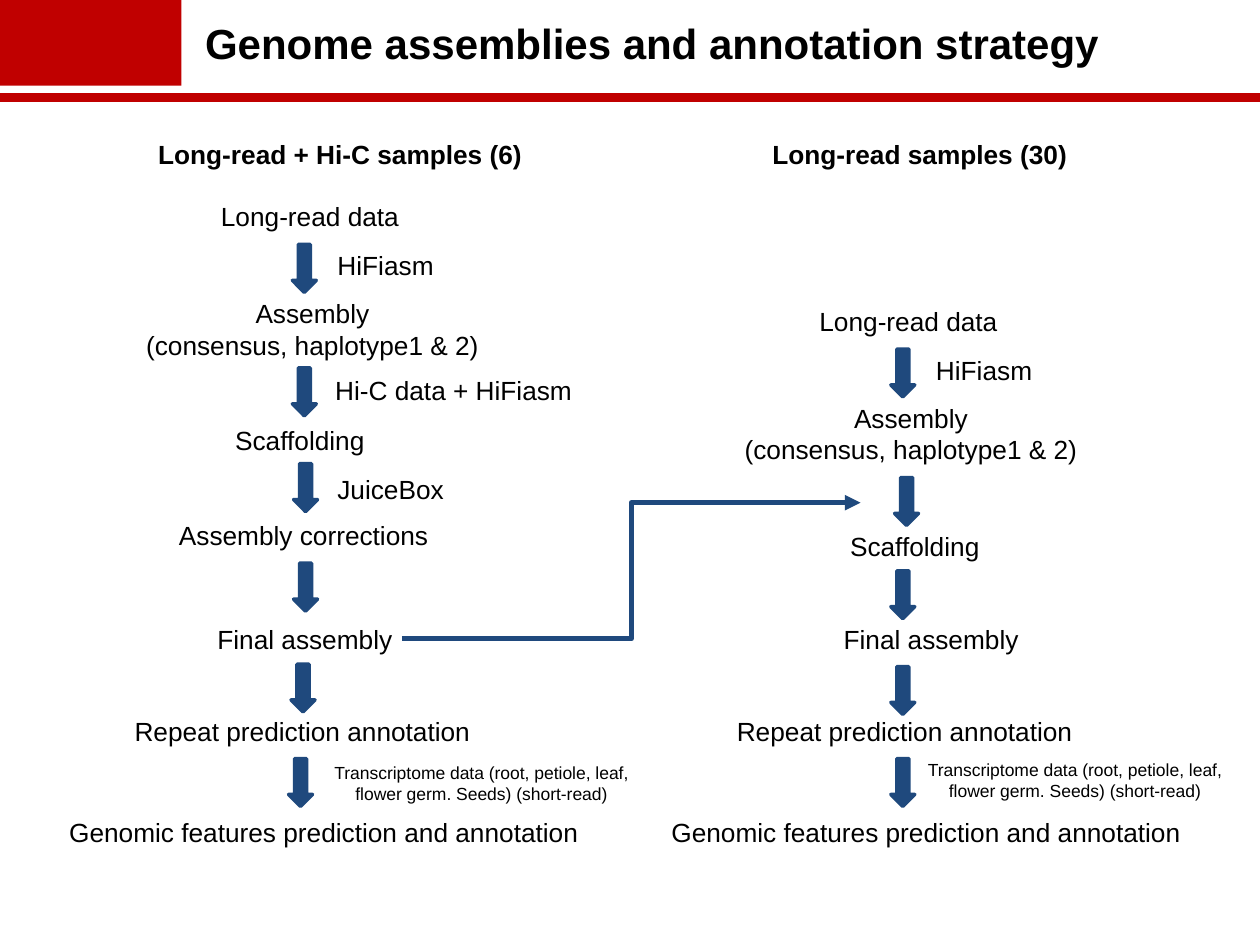
from lxml import etree
from pptx import Presentation
from pptx import util as u
from pptx.dml.color import RGBColor
from pptx.enum import shapes, text
from pptx.oxml.ns import qn

RED, BLUE, BLACK = "C00000", "1F497D", "000000"


def color(hex_string):
    return RGBColor.from_string(hex_string)


def write(tf, content, size=15, bold=False, align=text.PP_ALIGN.CENTER):
    """Fill a text frame, one paragraph per line of content."""
    for i, line in enumerate(content.split("\n")):
        p = tf.paragraphs[0] if i == 0 else tf.add_paragraph()
        p.alignment = align
        r = p.add_run()
        r.text = line
        r.font.name = "Arial"
        r.font.size = u.Pt(size)
        r.font.bold = bold
        r.font.color.rgb = color(BLACK)


class FlowSlide:
    arrow_size = (0.19, 0.38)

    def __init__(self, prs):
        self.s = prs.slides.add_slide(prs.slide_layouts[5])

    def title(self, content, x, y, w, h):
        sp = self.s.shapes.title
        sp.left, sp.top, sp.width, sp.height = map(u.Inches, (x, y, w, h))
        tf = sp.text_frame
        tf.vertical_anchor = text.MSO_ANCHOR.MIDDLE
        write(tf, content, size=24, bold=True)

    def shape(self, kind, x, y, w, h, fill, line_width=None):
        sp = self.s.shapes.add_shape(kind, *map(u.Inches, (x, y, w, h)))
        sp.shadow.inherit = False
        sp.fill.solid()
        sp.fill.fore_color.rgb = color(fill)
        if line_width:
            sp.line.color.rgb = color(fill)
            sp.line.width = u.Pt(line_width)
        else:
            sp.line.fill.background()

    def band(self, x, y, w, h):
        self.shape(shapes.MSO_SHAPE.RECTANGLE, x, y, w, h, RED)

    def arrow(self, x, y):
        self.shape(shapes.MSO_SHAPE.DOWN_ARROW, x, y, *self.arrow_size, BLUE, 2)

    def label(self, content, center, y, w, h=0.33, wrap=False, **style):
        """Add text centred on a horizontal position."""
        sp = self.s.shapes.add_textbox(*map(u.Inches, (center - w / 2, y, w, h)))
        tf = sp.text_frame
        tf.word_wrap = wrap
        tf.auto_size = text.MSO_AUTO_SIZE.SHAPE_TO_FIT_TEXT
        tf.margin_left = tf.margin_right = u.Inches(0.07)
        tf.margin_top = tf.margin_bottom = u.Inches(0.04)
        write(tf, content, **style)

    def elbow(self, x1, y1, x2, y2):
        c = self.s.shapes.add_connector(
            shapes.MSO_CONNECTOR.ELBOW, *map(u.Inches, (x1, y1, x2, y2)))
        c.line.color.rgb = color(BLUE)
        c.line.width = u.Pt(3)
        etree.SubElement(c.line._get_or_add_ln(), qn("a:tailEnd"), type="triangle")
        etree.SubElement(c._element.spPr, qn("a:effectLst"))

    def assembly_steps(self, dx=0, dy=0):
        self.label("Long-read data", 2.46 + dx, 1.55 + dy, 1.7)
        self.arrow(2.32 + dx, 1.94 + dy)
        self.label("HiFiasm", 3.06 + dx, 1.94 + dy, 0.98)
        self.label("Assembly\n(consensus, haplotype1 & 2)", 2.48 + dx, 2.32 + dy, 2.87, 0.58)

    def annotation_steps(self, dx=0):
        self.label("Repeat prediction annotation", 2.4 + dx, 5.64, 2.84)
        self.arrow(2.29 + dx, 6.02)
        self.label("Genomic features prediction and annotation", 2.57 + dx, 6.44, 4.23)

    def transcriptome(self, center, y):
        self.label("Transcriptome data (root, petiole, leaf, flower germ. Seeds) (short-read)",
                   center, y, 2.49, 0.41, wrap=True, size=10)


def main():
    prs = Presentation()
    prs.slide_width, prs.slide_height = u.Inches(10), u.Inches(7.5)
    flow = FlowSlide(prs)

    flow.band(0, 0.74, 10, 0.07)
    flow.band(0, -0.01, 1.44, 0.69)
    flow.title("Genome assemblies and annotation strategy", 1.3, 0.09, 7.75, 0.5)

    flow.label("Long-read + Hi-C samples (6)", 2.7, 1.06, 3.3, bold=True)
    flow.assembly_steps()
    flow.label("Hi-C data + HiFiasm", 3.6, 2.93, 2.11)
    flow.label("Scaffolding", 2.38, 3.33, 1.24)
    flow.label("JuiceBox", 3.1, 3.72, 1)
    flow.label("Assembly corrections", 2.41, 4.08, 2.15)
    flow.label("Final assembly", 2.42, 4.91, 1.55)
    for x, y in ((2.32, 2.92), (2.33, 3.68), (2.33, 4.47), (2.31, 5.27)):
        flow.arrow(x, y)
    flow.annotation_steps()
    flow.transcriptome(3.82, 6.01)

    flow.label("Long-read samples (30)", 7.3, 1.06, 2.7, bold=True)
    flow.assembly_steps(dx=4.75, dy=0.83)
    flow.label("Scaffolding", 7.26, 4.17, 1.24)
    flow.label("Final assembly", 7.39, 4.91, 1.55)
    for x, y in ((7.1, 3.79), (7.07, 4.53), (7.07, 5.29)):
        flow.arrow(x, y)
    flow.annotation_steps(dx=4.78)
    flow.transcriptome(8.53, 5.98)

    flow.elbow(3.19, 5.07, 6.83, 3.99)
    prs.save("out.pptx")


if __name__ == "__main__":
    main()
